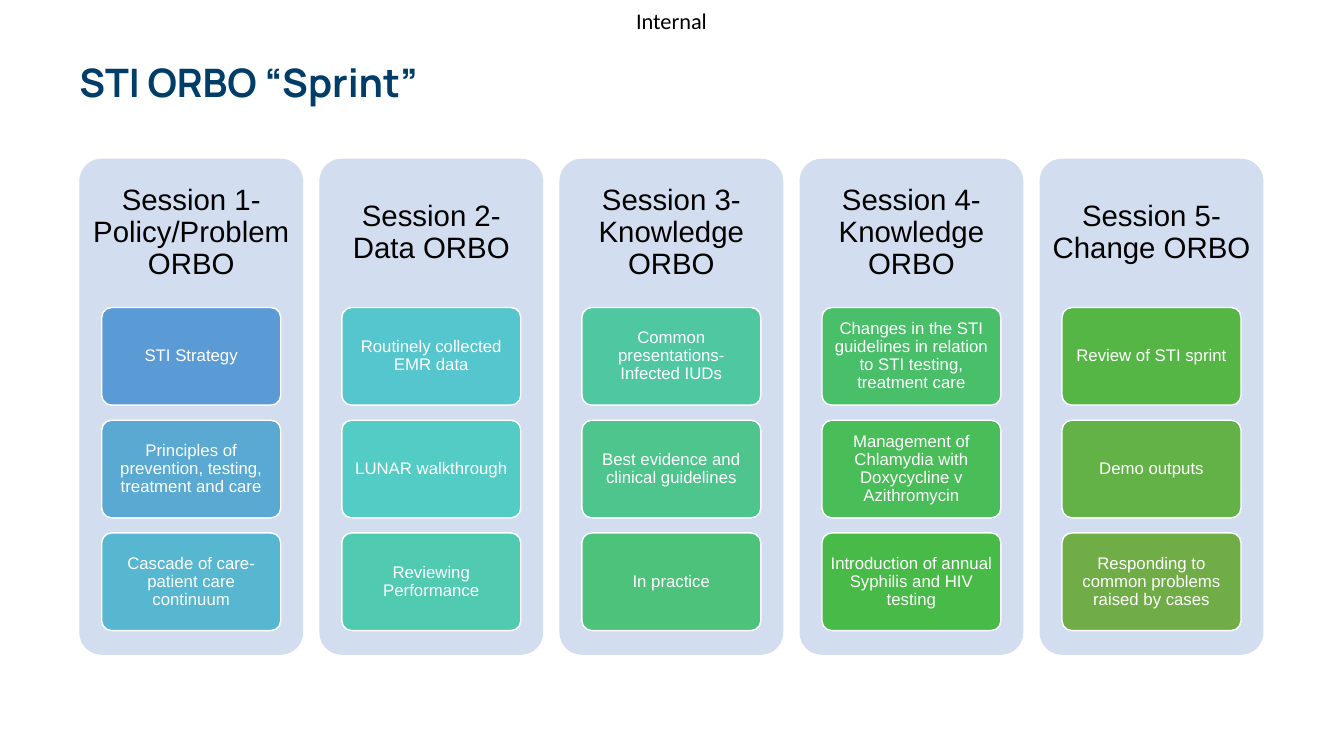
from dataclasses import dataclass

from pptx import Presentation
from pptx.dml.color import RGBColor
from pptx.enum import shapes, text
from pptx.util import Cm, Pt

LABEL = "Internal"
TITLE = "STI ORBO “Sprint”"
# Each session: heading, then (topic, card colour) from top to bottom
SESSIONS = [
    ("Session 1-Policy/Problem ORBO", [
        ("STI Strategy", "5B9BD5"),
        ("Principles of prevention, testing, treatment and care", "59A9D3"),
        ("Cascade of care- patient care continuum", "57B7D1")]),
    ("Session 2- Data ORBO", [
        ("Routinely collected EMR data", "55C5CE"),
        ("LUNAR walkthrough", "53CCC5"),
        ("Reviewing Performance", "51CAB2")]),
    ("Session 3-Knowledge ORBO", [
        ("Common presentations- Infected IUDs", "4FC7A0"),
        ("Best evidence and clinical guidelines", "4DC58D"),
        ("In practice", "4CC27B")]),
    ("Session 4-Knowledge ORBO", [
        ("Changes in the STI guidelines in relation to STI testing, treatment care",
         "4ABF6A"),
        ("Management of Chlamydia with Doxycycline v Azithromycin", "48BD58"),
        ("Introduction of annual Syphilis and HIV testing", "47BA47")]),
    ("Session 5-Change ORBO", [
        ("Review of STI sprint", "55B646"),
        ("Demo outputs", "63B247"),
        ("Responding to common problems raised by cases", "70AD47")]),
]


@dataclass(frozen=True)
class Theme:
    navy: str = "003D69"
    black: str = "000000"
    white: str = "FFFFFF"
    panel: str = "D2DEEF"
    label_font: str = "Calibri"
    title_font: str = "Manrope"
    body_font: str = "Arial"
    label_size: int = 16
    title_size: int = 28
    heading_size: int = 21
    topic_size: int = 12


THEME = Theme()

# Lengths in centimetres
LEFT, PANEL_TOP = 2, 4
PANEL_W, PANEL_H, PANEL_PITCH = 5.64, 12.5, 6.05
HEADING_H = 3.75
CARD_W, CARD_H, CARD_PITCH = 4.51, 2.46, 2.84
CARD_INDENT = (PANEL_W - CARD_W) / 2
CORNER = 0.1


def write(shape, words, font, size, colour, insets, bold=False, centred=False):
    """Put one paragraph in a shape; insets are left, top, right, bottom in cm."""
    frame = shape.text_frame
    frame.word_wrap = True
    (frame.margin_left, frame.margin_top,
     frame.margin_right, frame.margin_bottom) = map(Cm, insets)
    paragraph = frame.paragraphs[0]
    if centred:
        frame.vertical_anchor = text.MSO_ANCHOR.MIDDLE
        paragraph.alignment = text.PP_ALIGN.CENTER
        paragraph.line_spacing = 0.9
    run = paragraph.add_run()
    run.text = words
    run.font.name = font
    run.font.size = Pt(size)
    run.font.bold = bold
    run.font.color.rgb = RGBColor.from_string(colour)


def add_rounded(slide, left, top, width, height, fill, outline=None):
    box = slide.shapes.add_shape(
        shapes.MSO_SHAPE.ROUNDED_RECTANGLE,
        Cm(left), Cm(top), Cm(width), Cm(height))
    box.adjustments[0] = CORNER
    box.shadow.inherit = False
    box.fill.solid()
    box.fill.fore_color.rgb = RGBColor.from_string(fill)
    if outline:
        box.line.color.rgb = RGBColor.from_string(outline)
        box.line.width = Pt(1)
    else:
        box.line.fill.background()
    return box


def add_session(slide, left, heading, topics):
    panel = add_rounded(slide, left, PANEL_TOP, PANEL_W, PANEL_H, THEME.panel)
    # The bottom inset keeps the heading above the cards
    write(panel, heading, THEME.body_font, THEME.heading_size, THEME.black,
          (0.07, 0.07, 0.07, PANEL_H - HEADING_H + 0.07), centred=True)
    for row, (topic, colour) in enumerate(topics):
        card = add_rounded(slide, left + CARD_INDENT,
                           PANEL_TOP + HEADING_H + row * CARD_PITCH,
                           CARD_W, CARD_H, colour, THEME.white)
        write(card, topic, THEME.body_font, THEME.topic_size, THEME.white,
              (0.08,) * 4, centred=True)


def main():
    deck = Presentation()
    deck.slide_width, deck.slide_height = Cm(33.87), Cm(19.05)
    slide = deck.slides.add_slide(deck.slide_layouts[6])

    label = slide.shapes.add_textbox(Cm(16.03), Cm(0.18), Cm(1.93), Cm(0.69))
    write(label, LABEL, THEME.label_font, THEME.label_size, THEME.black, (0,) * 4)

    title = slide.shapes.add_textbox(Cm(LEFT), Cm(1.5), Cm(29.87), Cm(1.3))
    write(title, TITLE, THEME.title_font, THEME.title_size, THEME.navy,
          (0, 0.1, 0, 0.1), bold=True)
    title.text_frame.paragraphs[0].line_spacing = 0.9

    for column, (heading, topics) in enumerate(SESSIONS):
        add_session(slide, LEFT + column * PANEL_PITCH, heading, topics)
    deck.save("out.pptx")


if __name__ == "__main__":
    main()
